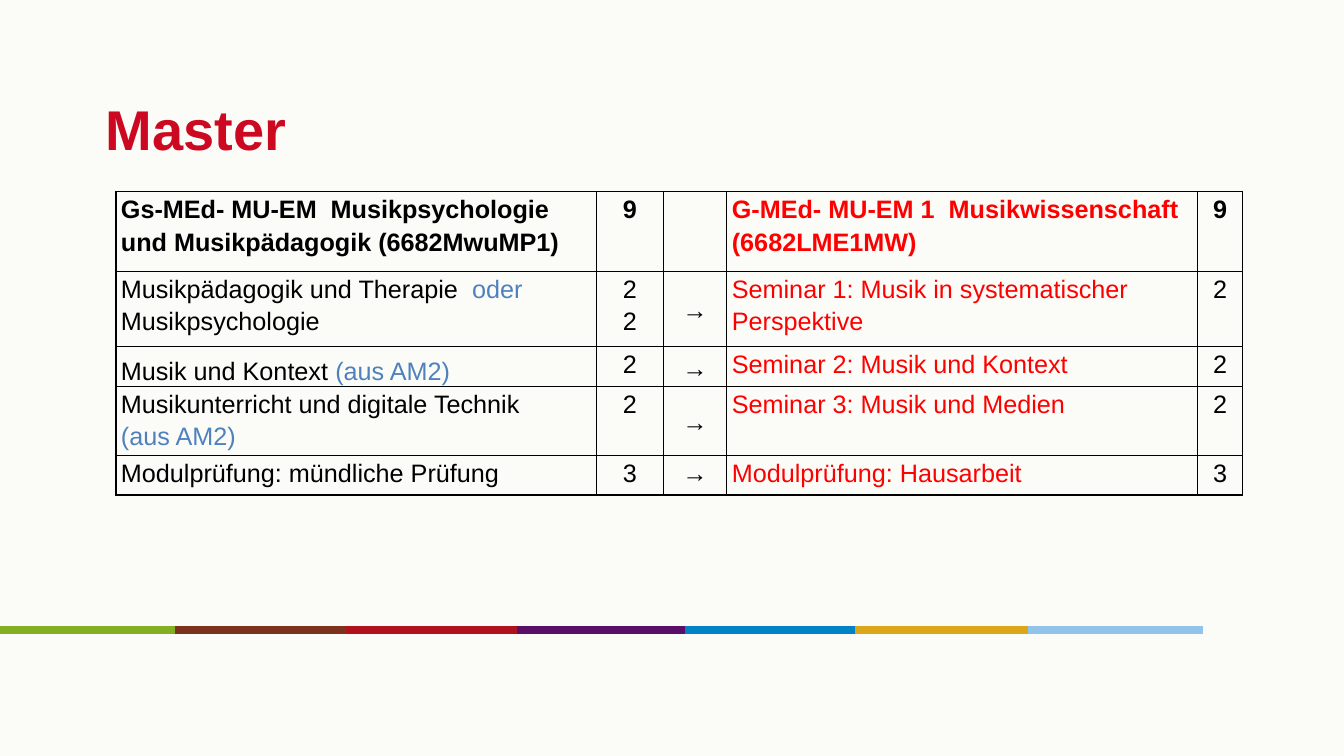
from lxml import etree
from pptx import Presentation
from pptx.dml.color import RGBColor
from pptx.enum.shapes import MSO_CONNECTOR
from pptx.enum.text import MSO_ANCHOR, PP_ALIGN
from pptx.oxml.ns import qn
from pptx.util import Pt

PAPER = RGBColor(0xFB, 0xFC, 0xF8)
TITLE_RED = RGBColor(0xCD, 0x09, 0x21)
BLACK = RGBColor(0, 0, 0)
RED = RGBColor(0xFF, 0, 0)
BLUE = RGBColor(0x4F, 0x81, 0xBD)
GREEN = RGBColor(0x83, 0xAF, 0x23)
BROWN = RGBColor(0x7D, 0x32, 0x1D)
CRIMSON = RGBColor(0xAF, 0x11, 0x1D)
PURPLE = RGBColor(0x59, 0x0F, 0x68)
OCEAN = RGBColor(0, 0x82, 0xC6)
GOLD = RGBColor(0xDB, 0xA6, 0x19)
SKY = RGBColor(0x91, 0xC4, 0xEA)

COLUMNS = [343.4, 47.6, 45.4, 336.2, 32.4]
ROWS = [56.9, 54, 28.1, 47.5, 28.1]
STRIPES = [(0, GREEN), (125.3, BROWN), (247, CRIMSON), (369.4, PURPLE),
           (489.6, OCEAN), (610.6, GOLD), (734.4, SKY)]
MODULES = [
    ([[("Gs-MEd- MU-EM  Musikpsychologie und Musikpädagogik (6682MwuMP1)", BLACK)]],
     "9", "", "G-MEd- MU-EM 1  Musikwissenschaft (6682LME1MW)", "9"),
    ([[("Musikpädagogik und Therapie  ", BLACK), ("oder\n", BLUE), ("Musikpsychologie", BLACK)]],
     "2\n2", "→", "Seminar 1: Musik in systematischer Perspektive", "2"),
    ([[("Musik und Kontext ", BLACK), ("(aus AM2)", BLUE)]],
     "2", "→", "Seminar 2: Musik und Kontext", "2"),
    ([[("Musikunterricht und digitale Technik", BLACK)], [("(aus AM2)", BLUE)]],
     "2", "→", "Seminar 3: Musik und Medien", "2"),
    ([[("Modulprüfung: mündliche Prüfung", BLACK)]],
     "3", "→", "Modulprüfung: Hausarbeit", "3"),
]


class SlideBuilder:
    """Draws styled elements on one slide."""

    font = "Arial"
    inset = 3.6
    body_size = 18

    def __init__(self, prs):
        self.s = prs.slides.add_slide(prs.slide_layouts[6])
        self.s.background.fill.solid()
        self.s.background.fill.fore_color.rgb = PAPER

    def style(self, font, size, color, bold):
        font.name, font.size, font.bold = self.font, Pt(size), bold
        font.color.rgb = color

    def title(self, text, left, top, width, height):
        tf = self.s.shapes.add_textbox(Pt(left), Pt(top), Pt(width), Pt(height)).text_frame
        tf.word_wrap = True
        tf.vertical_anchor = MSO_ANCHOR.MIDDLE
        tf.margin_left = tf.margin_right = tf.margin_top = tf.margin_bottom = Pt(self.inset)
        tf.text = text
        self.style(tf.paragraphs[0].runs[0].font, 40, TITLE_RED, True)

    def stripe(self, left, y, length, color):
        line = self.s.shapes.add_connector(
            MSO_CONNECTOR.STRAIGHT, Pt(left), Pt(y), Pt(left + length), Pt(y))
        line.line.color.rgb = color
        line.line.width = Pt(5.5)
        etree.SubElement(line._element.spPr, qn("a:effectLst"))

    def table(self, left, top, columns, rows):
        table = self.s.shapes.add_table(
            len(rows), len(columns), Pt(left), Pt(top), Pt(sum(columns)), Pt(sum(rows))).table
        table.first_row = table.horz_banding = False
        for column, width in zip(table.columns, columns):
            column.width = Pt(width)
        for row, height in zip(table.rows, rows):
            row.height = Pt(height)
        return table

    def cell(self, cell, paragraphs, bold, align, anchor):
        cell.margin_left = cell.margin_right = Pt(self.inset)
        cell.margin_top = cell.margin_bottom = 0
        cell.vertical_anchor = anchor
        self.borders(cell)
        cell.fill.background()
        tf = cell.text_frame
        for i, parts in enumerate(paragraphs):
            p = tf.add_paragraph() if i else tf.paragraphs[0]
            p.alignment = align
            p.line_spacing = 1.15
            for text, color in parts:
                for n, chunk in enumerate(text.split("\n")):
                    if n:
                        p.add_line_break()
                    if chunk:
                        r = p.add_run()
                        r.text = chunk
                        self.style(r.font, self.body_size, color, bold)

    def borders(self, cell):
        tc_pr = cell._tc.get_or_add_tcPr()
        for side in ("lnL", "lnR", "lnT", "lnB"):
            ln = etree.SubElement(tc_pr, qn(f"a:{side}"), w=str(Pt(1)))
            fill = etree.SubElement(ln, qn("a:solidFill"))
            etree.SubElement(fill, qn("a:srgbClr"), val=str(BLACK))


def main():
    prs = Presentation()
    prs.slide_width, prs.slide_height = Pt(960), Pt(540)
    slide = SlideBuilder(prs)
    for left, color in STRIPES:
        slide.stripe(left, 450, 124.8, color)
    slide.title("Master", 72, 46.8, 816, 90)
    table = slide.table(82.8, 136.8, COLUMNS, ROWS)
    last = len(MODULES) - 1
    for i, (old, old_points, arrow, new, new_points) in enumerate(MODULES):
        contents = [old, [[(old_points, BLACK)]], [[(arrow, BLACK)]],
                    [[(new, RED)]], [[(new_points, BLACK)]]]
        for j, paragraphs in enumerate(contents):
            align = PP_ALIGN.LEFT if j in (0, 3) else PP_ALIGN.CENTER
            anchor = MSO_ANCHOR.TOP
            if j == 2 and 0 < i < last:
                anchor = MSO_ANCHOR.MIDDLE
            elif (i, j) == (2, 0):
                anchor = MSO_ANCHOR.BOTTOM
            slide.cell(table.cell(i, j), paragraphs, i == 0, align, anchor)
    prs.save("out.pptx")


if __name__ == "__main__":
    main()
